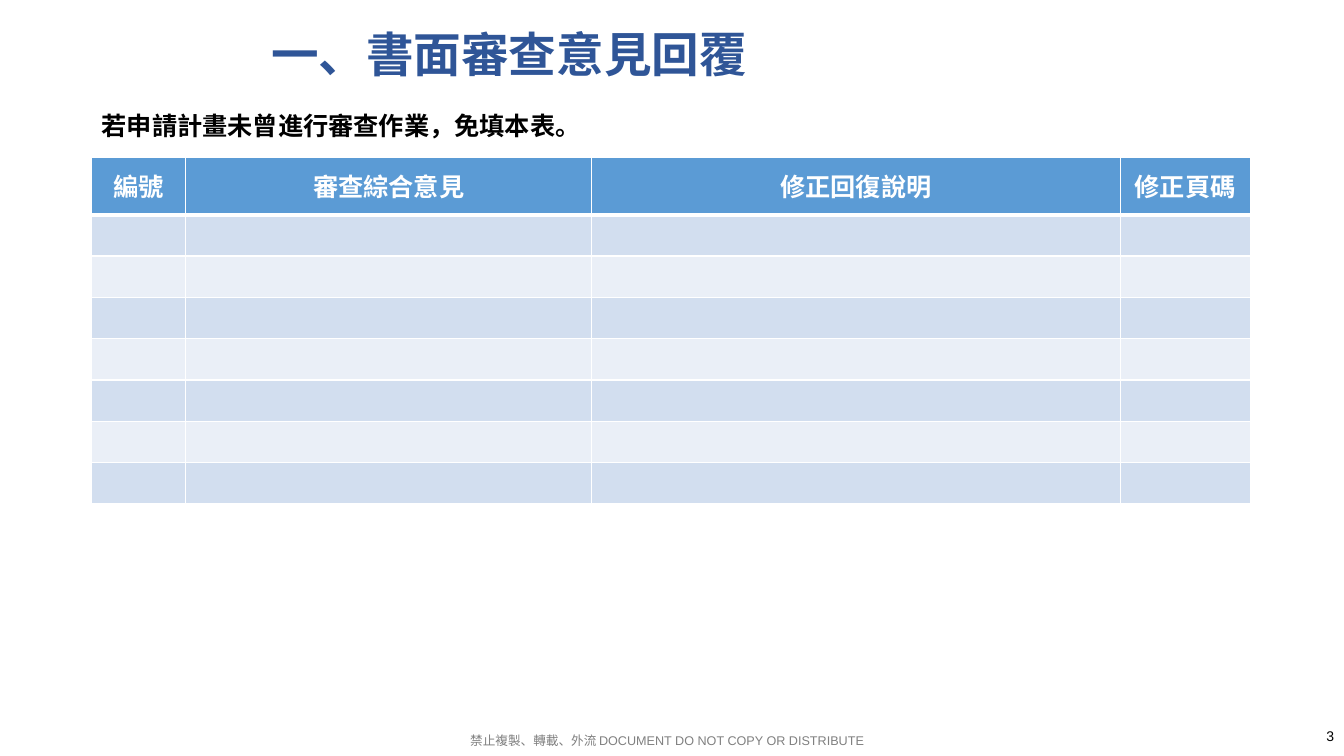
from pptx import Presentation
from pptx.dml.color import RGBColor
from pptx.enum.text import MSO_ANCHOR as ANCHOR, PP_ALIGN as ALIGN
from pptx.oxml import parse_xml
from pptx.oxml.ns import nsdecls
from pptx.util import Inches, Pt

TITLE = "一、書面審查意見回覆"
NOTE = "若申請計畫未曾進行審查作業，免填本表。"
FOOTER = "禁止複製、轉載、外流 DOCUMENT DO NOT COPY OR DISTRIBUTE"
PAGE = "3"
COLUMNS = [("編號", 0.93), ("審查綜合意見", 4.03),
           ("修正回復說明", 5.24), ("修正頁碼", 1.29)]
BLANK_ROWS = 7
HEADER_HEIGHT, ROW_HEIGHT = 0.57, 0.41
LEFT, TABLE_TOP = 0.91, 1.56
HEADER_FILL, BANDS = "5B9BD5", ("D2DEEF", "EAEFF7")
FONT = "Arial"


def rgb(color):
    return RGBColor.from_string(color)


def place(sp, left, top, width, height):
    sp.left, sp.top = Inches(left), Inches(top)
    sp.width, sp.height = Inches(width), Inches(height)


def write(tf, text, size, color, bold=False, align=ALIGN.LEFT):
    tf.text = text
    p = tf.paragraphs[0]
    p.alignment = align
    p.font.name, p.font.size, p.font.bold = FONT, Pt(size), bold
    p.font.color.rgb = rgb(color)
    return p


def add_text(slide, box, text, size, color, bold=False, align=ALIGN.LEFT,
             anchor=ANCHOR.TOP, wrap=True):
    tf = slide.shapes.add_textbox(*map(Inches, box)).text_frame
    tf.word_wrap = wrap
    tf.vertical_anchor = anchor
    write(tf, text, size, color, bold, align)


def set_borders(cell, top=1, bottom=1):
    """Draw white cell borders, with widths in points."""
    tc_pr = cell._tc.get_or_add_tcPr()
    widths = {"lnL": 1, "lnR": 1, "lnT": top, "lnB": bottom}
    for i, (side, width) in enumerate(widths.items()):
        tc_pr.insert(i, parse_xml(
            f'<a:{side} {nsdecls("a")} w="{Pt(width)}"><a:solidFill>'
            f'<a:srgbClr val="FFFFFF"/></a:solidFill></a:{side}>'))


def add_review_table(slide):
    heights = [HEADER_HEIGHT] + [ROW_HEIGHT] * BLANK_ROWS
    width = sum(w for _, w in COLUMNS)
    table = slide.shapes.add_table(
        len(heights), len(COLUMNS), Inches(LEFT), Inches(TABLE_TOP),
        Inches(width), Inches(sum(heights))).table
    for row, height in zip(table.rows, heights):
        row.height = Inches(height)
    for c, (heading, col_width) in enumerate(COLUMNS):
        table.columns[c].width = Inches(col_width)
        for r in range(len(heights)):
            cell = table.cell(r, c)
            cell.fill.solid()
            cell.fill.fore_color.rgb = rgb(BANDS[(r - 1) % 2] if r else HEADER_FILL)
            set_borders(cell, top=3 if r == 1 else 1, bottom=1 if r else 3)
        header = table.cell(0, c)
        header.vertical_anchor = ANCHOR.MIDDLE
        write(header.text_frame, heading, 18, "FFFFFF", True, ALIGN.CENTER)


def main():
    prs = Presentation()
    prs.slide_width, prs.slide_height = Inches(13.33), Inches(7.5)
    slide = prs.slides.add_slide(prs.slide_layouts[5])

    title = slide.shapes.title
    place(title, 2.59, 0.01, 9.38, 1.12)
    title.text_frame.vertical_anchor = ANCHOR.MIDDLE
    p = write(title.text_frame, TITLE, 34, "2F5597", True)
    p.line_spacing = 0.9

    add_text(slide, (4.19, 7.22, 4.85, 0.25), FOOTER, 9, "808080",
             align=ALIGN.CENTER)
    add_review_table(slide)
    add_text(slide, (10.33, 7.1, 3, 0.4), PAGE, 10, "000000",
             align=ALIGN.RIGHT, anchor=ANCHOR.MIDDLE)
    add_text(slide, (LEFT, 1.05, 5, 0.4), NOTE, 18, "000000", bold=True,
             wrap=False)
    prs.save("out.pptx")


if __name__ == "__main__":
    main()
